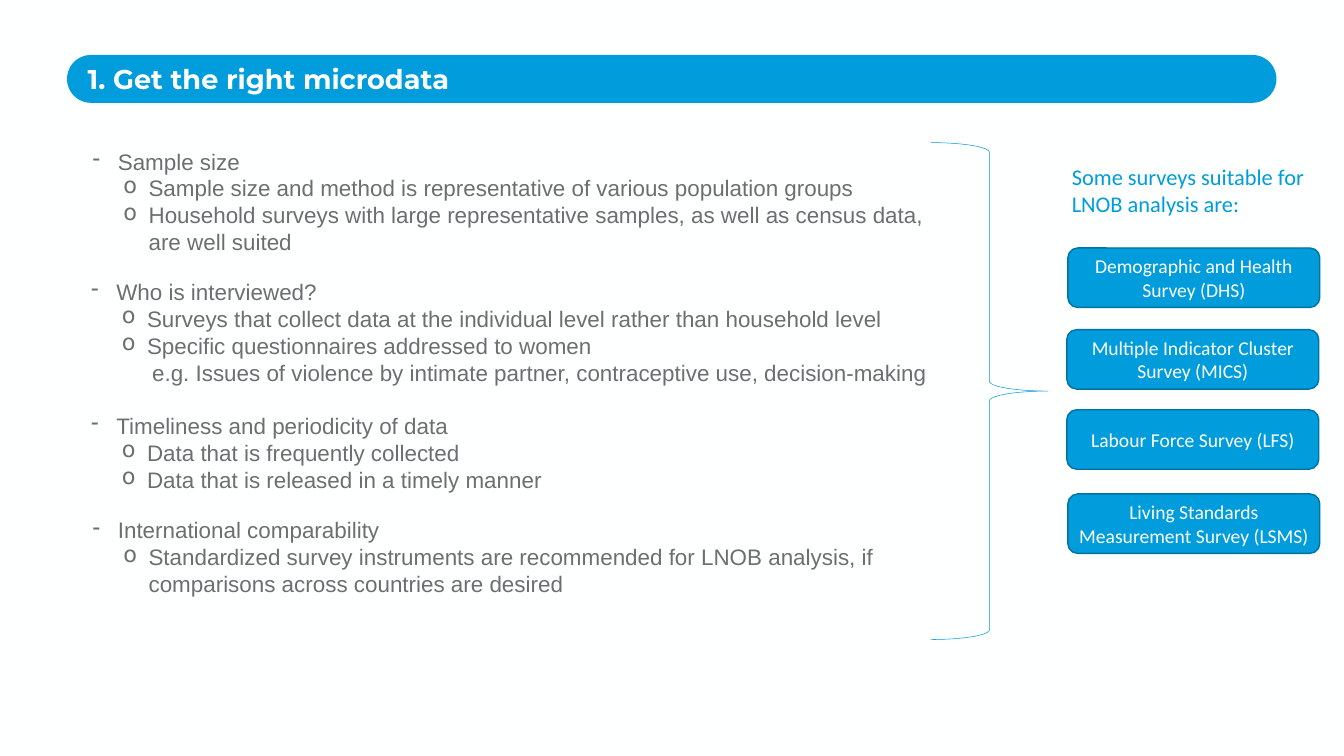
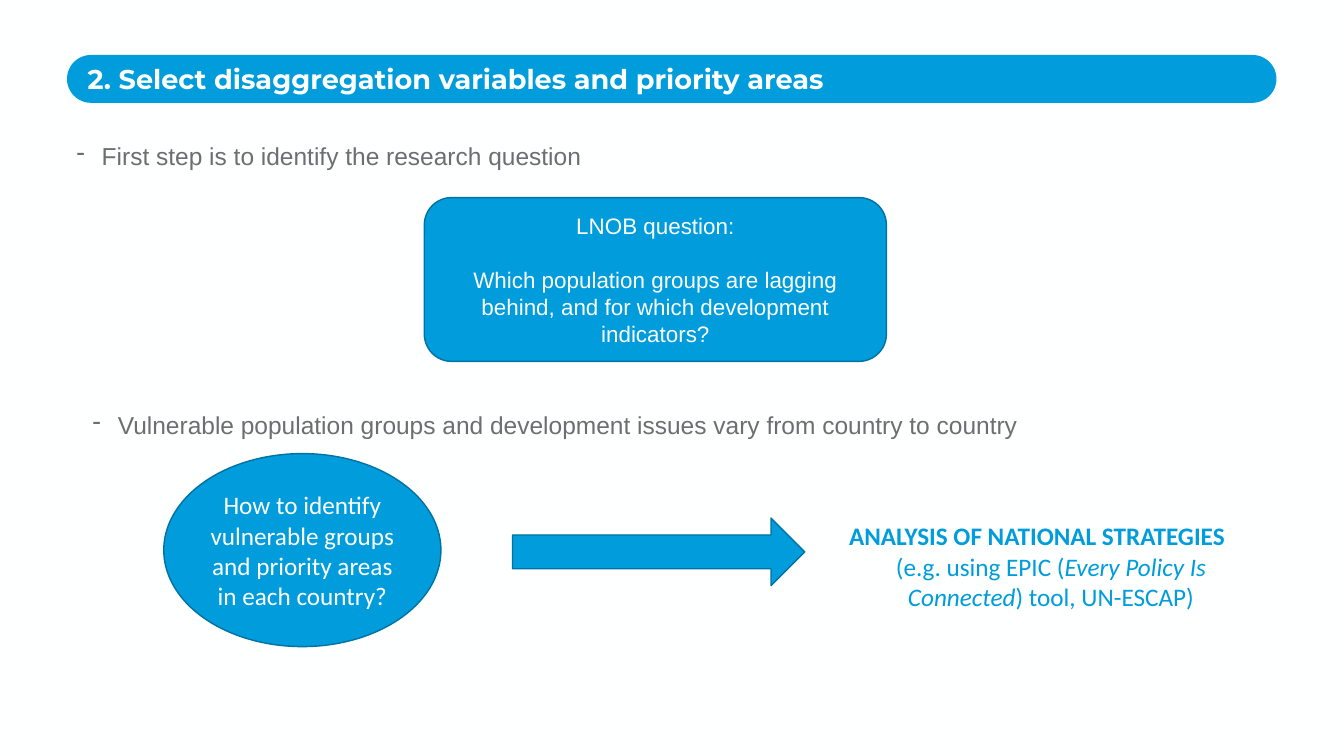
from dataclasses import dataclass
from typing import Any, NamedTuple

from lxml import etree
from pptx import Presentation
from pptx.dml.color import RGBColor
from pptx.enum.shapes import MSO_SHAPE
from pptx.enum.text import MSO_ANCHOR, MSO_AUTO_SIZE, PP_ALIGN
from pptx.oxml.ns import qn
from pptx.util import Pt

PX = 9144
WHITE = RGBColor(0xFE, 0xFF, 0xFF)
BLUE = RGBColor(0x00, 0x9C, 0xDB)
EDGE = RGBColor(0x00, 0x73, 0xA2)
BRACE = RGBColor(0x00, 0x99, 0xD6)
GREY = RGBColor(0x6D, 0x6E, 0x70)

ROUND = MSO_SHAPE.ROUNDED_RECTANGLE
OVAL = MSO_SHAPE.OVAL
ARROW = MSO_SHAPE.RIGHT_ARROW
CURLY = MSO_SHAPE.RIGHT_BRACE
LEFT = PP_ALIGN.LEFT
CENTER = PP_ALIGN.CENTER
TOP = MSO_ANCHOR.TOP
MIDDLE = MSO_ANCHOR.MIDDLE
FIXED = MSO_AUTO_SIZE.NONE


class Box(NamedTuple):
    x: int
    y: int
    w: int
    h: int

    def emu(self) -> list[int]:
        return [side * PX for side in self]


class Style(NamedTuple):
    face: str
    size: float
    color: RGBColor
    bold: bool = False


class Run(NamedTuple):
    text: str
    extra: dict[str, bool] = {}


@dataclass
class Line:
    runs: list[Run]
    level: int = 0
    indent: int = 0
    mark: str = ""
    align: Any = LEFT
    before: int = 0


@dataclass
class Note:
    box: Box
    lines: list[Line]
    style: Style


@dataclass
class Card:
    box: Box
    lines: list[Line]
    style: Style
    kind: Any = ROUND


HEAD = Style("Montserrat", 38.8, WHITE, True)
BODY = Style("Arial", 32, GREY)
STEP = Style("Arial", 35, GREY)
ASK = Style("Arial", 32, WHITE)
LEAD = Style("Calibri", 32, BLUE)
NAME = Style("Calibri", 28, WHITE)
GOAL = Style("Calibri", 36, WHITE)
PLAN = Style("Calibri", 36, BLUE)
HANG = 50


def plain(text: str) -> Line:
    return Line([Run(text)])


def mid(text: str, before: int = 0) -> Line:
    return Line([Run(text)], align=CENTER, before=before)


def dash(text: str) -> Line:
    return Line([Run(text)], 0, 50, "-")


def ring(text: str) -> Line:
    return Line([Run(text)], 1, 111, "o")


def deep(text: str) -> Line:
    return Line([Run(text)], 2, 121)


NOTES = [
    Note(Box(174, 288, 1735, 226), [
        dash("Sample size"),
        ring("Sample size and method is representative of various population groups"),
        ring("Household surveys with large representative samples, "
             "as well as census data, are well suited"),
    ], BODY),
    Note(Box(171, 547, 1738, 279), [
        dash("Who is interviewed?"),
        ring("Surveys that collect data at the individual level "
             "rather than household level"),
        ring("Specific questionnaires addressed to women"),
        deep("e.g. Issues of violence by intimate partner, "
             "contraceptive use, decision-making"),
    ], BODY),
    Note(Box(171, 813, 2001, 226), [
        dash("Timeliness and periodicity of data"),
        ring("Data that is frequently collected"),
        ring("Data that is released in a timely manner"),
    ], BODY),
    Note(Box(174, 1020, 1735, 172), [
        dash("International comparability"),
        ring("Standardized survey instruments are recommended for LNOB "
             "analysis, if comparisons across countries are desired"),
    ], BODY),
    Note(Box(2117, 319, 500, 118),
         [plain("Some surveys suitable for LNOB analysis are:")], LEAD),
]

CARDS = [
    Card(Box(x, y, 500, 118), [mid(text)], NAME)
    for x, y, text in (
        (2119, 492, "Demographic and Health Survey (DHS)"),
        (2117, 654, "Multiple Indicator Cluster Survey (MICS)"),
        (2117, 813, "Labour Force Survey (LFS)"),
        (2119, 980, "Living Standards Measurement Survey (LSMS)"),
    )
]

STEPS = [
    Note(Box(142, 275, 2001, 69),
         [dash("First step is to identify the research question")], STEP),
    Note(Box(174, 808, 2001, 69),
         [dash("Vulnerable population groups and development issues "
               "vary from country to country")], STEP),
    Note(Box(1675, 1028, 821, 192), [
        Line([Run("ANALYSIS OF NATIONAL STRATEGIES", {"bold": True})]),
        Line([
            Run("(e.g. using EPIC ("),
            Run("Every Policy Is Connected", {"italic": True}),
            Run(") tool, UN-ESCAP)"),
        ], align=CENTER),
    ], PLAN),
]

FLOW = [
    Card(Box(842, 392, 917, 325), [
        mid("LNOB question:"),
        mid("Which population groups are lagging behind, "
            "and for which development indicators?", 38),
    ], ASK),
    Card(Box(325, 900, 550, 383),
         [mid("How to identify vulnerable groups and priority areas "
              "in each country?")], GOAL, OVAL),
    Card(Box(1017, 1028, 580, 134), [], GOAL, ARROW),
]


def apply(target: Any, values: dict[str, Any]) -> None:
    for key, value in values.items():
        setattr(target, key, value)


def write(frame: Any, lines: list[Line], style: Style, anchor: Any = TOP) -> None:
    apply(frame, {"word_wrap": True, "auto_size": FIXED,
                  "vertical_anchor": anchor})
    for row, line in enumerate(lines):
        para = frame.add_paragraph() if row else frame.paragraphs[0]
        apply(para, {"level": line.level, "alignment": line.align})
        if line.before:
            para.space_before = Pt(line.before)
        props = para._p.get_or_add_pPr()
        if line.indent:
            props.set("marL", str(line.indent * PX))
            props.set("indent", str(-HANG * PX if line.mark else 0))
        if line.mark:
            etree.SubElement(props, qn("a:buChar")).set("char", line.mark)
        for part in line.runs:
            run = para.add_run()
            run.text = part.text
            apply(run.font, {"name": style.face, "size": Pt(style.size),
                             "bold": style.bold, **part.extra})
            run.font.color.rgb = style.color


def draw(slide: Any, kind: Any, box: Box, fill: RGBColor | None,
         edge: RGBColor | None, width: float = 2) -> Any:
    shape = slide.shapes.add_shape(kind, *box.emu())
    shape.shadow.inherit = False
    if fill is None:
        shape.fill.background()
    else:
        shape.fill.solid()
        shape.fill.fore_color.rgb = fill
    if edge is None:
        shape.line.fill.background()
    else:
        shape.line.color.rgb = edge
        shape.line.width = Pt(width)
    return shape


def share(deck: Any, layout: Any, slide: Any) -> None:
    back = deck.slide_master.background.fill
    back.solid()
    back.fore_color.rgb = WHITE
    band = draw(slide, ROUND, Box(133, 109, 2400, 95), BLUE, None)
    band.adjustments[0] = 0.5
    layout.shapes._spTree.insert(2, band._element)


def fill(slide: Any, title: str, notes: list[Note], cards: list[Card]) -> None:
    head = slide.shapes.title
    left, top, width, height = Box(174, 123, 2322, 65).emu()
    apply(head, {"left": left, "top": top, "width": width, "height": height})
    apply(head.text_frame, {"margin_left": 0, "margin_top": 0,
                            "margin_right": 0, "margin_bottom": 0})
    write(head.text_frame, [plain(title)], HEAD)
    for note in notes:
        area = slide.shapes.add_textbox(*note.box.emu())
        write(area.text_frame, note.lines, note.style)
    for card in cards:
        shape = draw(slide, card.kind, card.box, BLUE, EDGE)
        write(shape.text_frame, card.lines, card.style, MIDDLE)


def main() -> None:
    deck = Presentation()
    apply(deck, {"slide_width": 2667 * PX, "slide_height": 1500 * PX})
    layout = deck.slide_layouts[5]
    first, second = [deck.slides.add_slide(layout) for _ in range(2)]
    share(deck, layout, first)
    fill(first, "1. Get the right microdata", NOTES, CARDS)
    draw(first, CURLY, Box(1847, 283, 233, 986), None, BRACE, 0.75)
    fill(second, "2. Select disaggregation variables and priority areas",
         STEPS, FLOW)
    deck.save("out.pptx")


if __name__ == "__main__":
    main()
